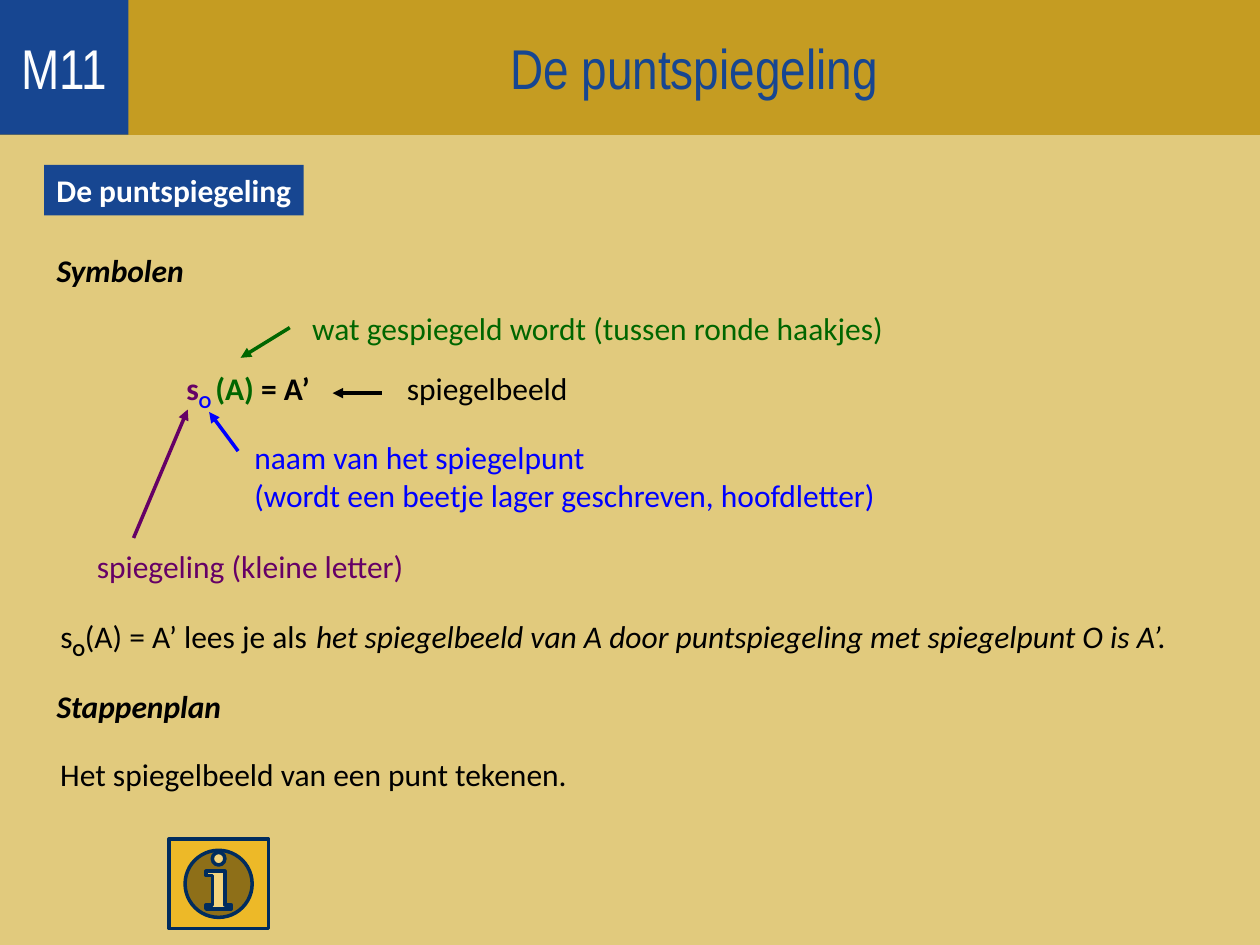
"""Build the lesson slide on the symbols of a point reflection."""
from dataclasses import dataclass

from lxml import etree
from pptx import Presentation
from pptx import util as u
from pptx.dml.color import RGBColor
from pptx.enum import shapes, text
from pptx.oxml.ns import qn


@dataclass(frozen=True)
class Theme:
    """Colours, fonts and sizes of the slide."""
    page: str = "E1CA7D"
    band: str = "C59C22"
    navy: str = "174691"
    white: str = "FFFFFF"
    badge_text: str = "FCFDFE"
    ink: str = "000000"
    purple: str = "660066"
    green: str = "006600"
    blue: str = "0000FF"
    button: str = "EDB928"
    button_line: str = "002C5E"
    body_font: str = "Calibri"
    head_font: str = "Arial Narrow"
    body: int = 18
    head: int = 32
    line: int = 2


T = Theme()
WIDTH, HEIGHT = u.Inches(10), u.Inches(7.5)
COLS, ROWS = 100, 75
TEXT_ROWS, HEAD_ROWS, BADGE_COLS = 4, 10.7, 10.2


def x(cols):
    """Turn grid columns into a length."""
    return round(WIDTH * cols / COLS)


def y(rows):
    """Turn grid rows into a length."""
    return round(HEIGHT * rows / ROWS)


def box(col, row, cols, rows):
    """Turn a grid cell range into left, top, width and height."""
    return x(col), y(row), x(cols), y(rows)


def paint(target, color):
    """Give a shape or background a solid fill."""
    target.fill.solid()
    target.fill.fore_color.rgb = RGBColor.from_string(color)


def add_run(p, words, color=T.ink, font=T.body_font, size=T.body,
            bold=False, italic=False, sub=False):
    """Add one formatted run to a paragraph."""
    r = p.add_run()
    r.text = words
    r.font.name, r.font.size = font, u.Pt(size)
    r.font.bold, r.font.italic = bold, italic
    r.font.color.rgb = RGBColor.from_string(color)
    if sub:
        r._r.get_or_add_rPr().set("baseline", "-25000")


def add_text(s, col, row, cols, *lines, fill=None):
    """Add a label; each line is a list of (words, formatting) runs."""
    sp = s.shapes.add_textbox(*box(col, row, cols, TEXT_ROWS * len(lines)))
    if fill:
        paint(sp, fill)
    tf = sp.text_frame
    tf.word_wrap, tf.margin_right = False, 0
    for i, runs in enumerate(lines):
        p = tf.add_paragraph() if i else tf.paragraphs[0]
        for words, style in runs:
            add_run(p, words, **style)


def add_arrow(s, start, end, color):
    """Add an arrow between two grid points."""
    ln = s.shapes.add_connector(shapes.MSO_CONNECTOR.STRAIGHT,
                                x(start[0]), y(start[1]), x(end[0]), y(end[1]))
    ln.line.color.rgb = RGBColor.from_string(color)
    ln.line.width = u.Pt(T.line)
    etree.SubElement(ln.line._get_or_add_ln(), qn("a:tailEnd"), type="triangle")
    etree.SubElement(ln._element.spPr, qn("a:effectLst"))


def add_shape(s, kind, place, fill, line=None):
    """Add a flat preset shape."""
    sp = s.shapes.add_shape(kind, *place)
    sp.shadow.inherit = False
    paint(sp, fill)
    if line:
        sp.line.color.rgb = RGBColor.from_string(line)
        sp.line.width = u.Pt(T.line)
    else:
        sp.line.fill.background()
    return sp


def write_head(sp, words, color):
    """Write centred heading text in a shape."""
    tf = sp.text_frame
    tf.word_wrap, tf.auto_size = True, text.MSO_AUTO_SIZE.NONE
    tf.vertical_anchor = text.MSO_ANCHOR.MIDDLE
    tf.paragraphs[0].alignment = text.PP_ALIGN.CENTER
    add_run(tf.paragraphs[0], words, color, T.head_font, T.head)


def add_header(s):
    """Fill the title band and put the module badge on it."""
    title = s.shapes.title
    title.left, title.top, title.width, title.height = box(0, 0, COLS, HEAD_ROWS)
    paint(title, T.band)
    title.text_frame.margin_left = x(BADGE_COLS + 1)
    write_head(title, "De puntspiegeling", T.navy)
    badge = add_shape(s, shapes.MSO_SHAPE.RECTANGLE,
                      box(0, 0, BADGE_COLS, HEAD_ROWS), T.navy)
    write_head(badge, "M11", T.badge_text)


def add_symbols(s):
    """Explain each part of the notation with a label and an arrow."""
    purple, green, blue = ({"color": c} for c in (T.purple, T.green, T.blue))
    strong = {"bold": True}
    add_text(s, 13.8, 28.8, 12.1, [
        ("s", purple | strong), ("O ", blue | strong | {"sub": True}),
        ("(A)", green | strong), (" = A’", strong)])
    add_text(s, 23.8, 24, 65.3,
             [("wat gespiegeld wordt (tussen ronde haakjes)", green)])
    add_text(s, 31.3, 28.8, 14.8, [("spiegelbeeld", {})])
    add_text(s, 19.2, 34.3, 51.8,
             [("naam van het spiegelpunt", blue)],
             [("(wordt een beetje lager geschreven, hoofdletter)", blue)])
    add_text(s, 6.7, 42.9, 26.6, [("spiegeling (kleine letter)", purple)])
    for start, end, color in (((23, 26), (19.1, 28.4), T.green),
                              ((30.3, 31.2), (26.4, 31.2), T.ink),
                              ((18.9, 35.8), (16.6, 32.7), T.blue),
                              ((10.6, 42.7), (14.9, 32.5), T.purple)):
        add_arrow(s, start, end, color)


def main():
    """Build and save the slide."""
    prs = Presentation()
    prs.slide_width, prs.slide_height = WIDTH, HEIGHT
    s = prs.slides.add_slide(prs.slide_layouts[5])
    paint(s.background, T.page)
    add_header(s)
    add_text(s, 3.5, 13.1, 20.6,
             [("De puntspiegeling", {"color": T.white, "bold": True})], fill=T.navy)
    for row, cols, words in ((19.4, 12.2, "Symbolen"), (54, 15.1, "Stappenplan")):
        add_text(s, 3.5, row, cols, [(words, {"bold": True, "italic": True})])
    add_symbols(s)
    add_text(s, 3.8, 48.5, 21.9, [
        ("s", {}), ("O", {"bold": True, "sub": True}), ("(A) = A’ lees je als", {})])
    add_text(s, 24.1, 48.5, 70.1, [
        ("het spiegelbeeld van A door puntspiegeling met spiegelpunt O is A’.",
         {"italic": True})])
    add_text(s, 3.8, 59.4, 42.6, [("Het spiegelbeeld van een punt tekenen.", {})])
    add_shape(s, shapes.MSO_SHAPE.ACTION_BUTTON_INFORMATION,
              box(13.4, 66.6, 7.9, 7.1), T.button, T.button_line)
    prs.save("out.pptx")


if __name__ == "__main__":
    main()
